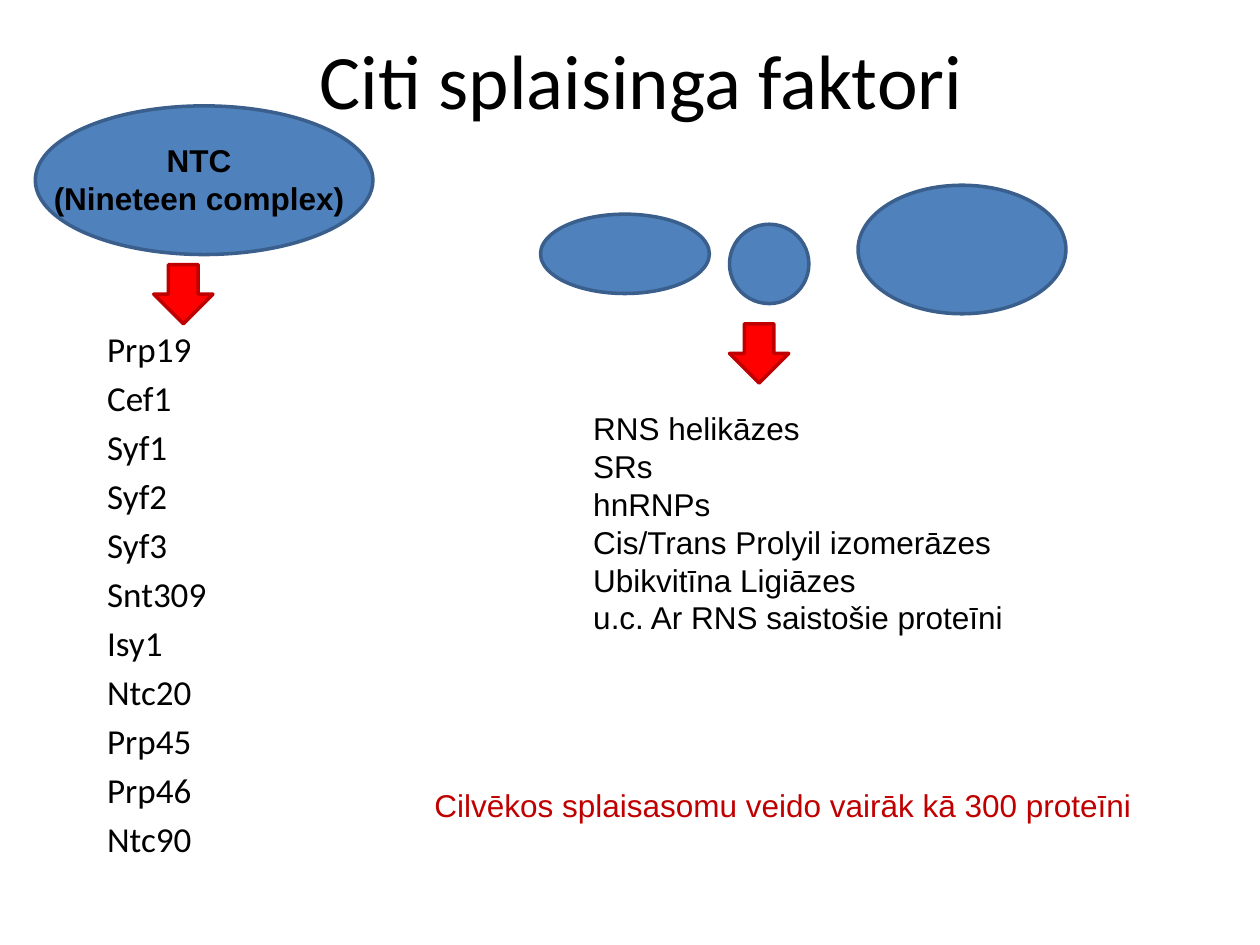
from lxml import etree
from pptx import Presentation
from pptx.dml.color import RGBColor
from pptx.enum.shapes import MSO_SHAPE
from pptx.enum.text import MSO_ANCHOR, MSO_AUTO_SIZE, PP_ALIGN
from pptx.oxml.ns import qn
from pptx.util import Inches, Pt

OVAL, DOWN_ARROW = MSO_SHAPE.OVAL, MSO_SHAPE.DOWN_ARROW
LEFT, CENTER = PP_ALIGN.LEFT, PP_ALIGN.CENTER
MIDDLE, TOP = MSO_ANCHOR.MIDDLE, MSO_ANCHOR.TOP
NO_AUTOFIT = MSO_AUTO_SIZE.NONE

COLORS = {
    "black": "000000",
    "blue": "4F81BD",
    "dark blue": "3A5F8C",
    "red": "FF0000",
    "dark red": "C00000",
}

TITLE = "Citi splaisinga faktori"
NTC_PROTEINS = ["Prp19", "Cef1", "Syf1", "Syf2", "Syf3", "Snt309",
                "Isy1", "Ntc20", "Prp45", "Prp46", "Ntc90"]
NTC_LABEL = ["NTC", "(Nineteen complex)"]
OTHER_FACTORS = ["RNS helikāzes", "SRs", "hnRNPs", "Cis/Trans Prolyil izomerāzes",
                 "Ubikvitīna Ligiāzes", "u.c. Ar RNS saistošie proteīni"]
HUMAN_NOTE = ["Cilvēkos splaisasomu veido vairāk kā 300 proteīni"]

NTC_OVAL = (0.28, 0.84, 2.68, 1.18)
FACTOR_OVALS = [(4.29, 1.7, 1.34, 0.63), (5.79, 1.78, 0.63, 0.63), (6.81, 1.47, 1.65, 1.02)]
ARROW_SIZE = 0.47
ARROW_CORNERS = [(1.22, 2.1), (5.79, 2.57)]


def color(name):
    return RGBColor.from_string(COLORS[name])


def box(bounds):
    return [Inches(value) for value in bounds]


def write(frame, lines, font_name, size, font_color="black", bold=False, alignment=LEFT):
    frame.word_wrap = True
    frame.text = "\n".join(lines)
    for paragraph in frame.paragraphs:
        paragraph.alignment = alignment
        font = paragraph.font
        font.name, font.size, font.bold = font_name, Pt(size), bold
        font.color.rgb = color(font_color)


def fill_placeholder(placeholder, bounds, lines, size, alignment, anchor):
    placeholder.left, placeholder.top, placeholder.width, placeholder.height = box(bounds)
    frame = placeholder.text_frame
    write(frame, lines, "Calibri", size, alignment=alignment)
    frame.auto_size = NO_AUTOFIT
    frame.vertical_anchor = anchor


def add_figure(slide, preset, bounds, fill, line):
    shape = slide.shapes.add_shape(preset, *box(bounds))
    shape.shadow.inherit = False
    shape.fill.solid()
    shape.fill.fore_color.rgb = color(fill)
    shape.line.color.rgb = color(line)
    shape.line.width = Pt(2)


def add_text(slide, bounds, lines, **style):
    text_box = slide.shapes.add_textbox(*box(bounds))
    write(text_box.text_frame, lines, "Arial", 18, **style)


def main():
    presentation = Presentation()
    presentation.slide_width, presentation.slide_height = Inches(10), Inches(7.5)
    slide = presentation.slides.add_slide(presentation.slide_layouts[1])

    fill_placeholder(slide.shapes.title, (0.59, 0, 9, 1.25), [TITLE], 44, CENTER, MIDDLE)
    body = slide.placeholders[1]
    fill_placeholder(body, (0.75, 2.55, 1.82, 4.95), NTC_PROTEINS, 20, LEFT, TOP)
    for paragraph in body.text_frame.paragraphs:
        properties = paragraph._p.get_or_add_pPr()
        bullet = etree.Element(qn("a:buNone"))
        properties.insert_element_before(bullet, "a:tabLst", "a:defRPr", "a:extLst")

    add_figure(slide, OVAL, NTC_OVAL, "blue", "dark blue")
    add_text(slide, (0.28, 1.07, 2.6, 0.71), NTC_LABEL, bold=True, alignment=CENTER)
    for bounds in FACTOR_OVALS:
        add_figure(slide, OVAL, bounds, "blue", "dark blue")
    for corner in ARROW_CORNERS:
        add_figure(slide, DOWN_ARROW, (*corner, ARROW_SIZE, ARROW_SIZE), "red", "dark red")
    add_text(slide, (4.61, 3.2, 3.62, 2.22), OTHER_FACTORS)
    add_text(slide, (3.35, 6.19, 6.06, 0.4), HUMAN_NOTE, font_color="dark red")

    presentation.save("out.pptx")


if __name__ == "__main__":
    main()
